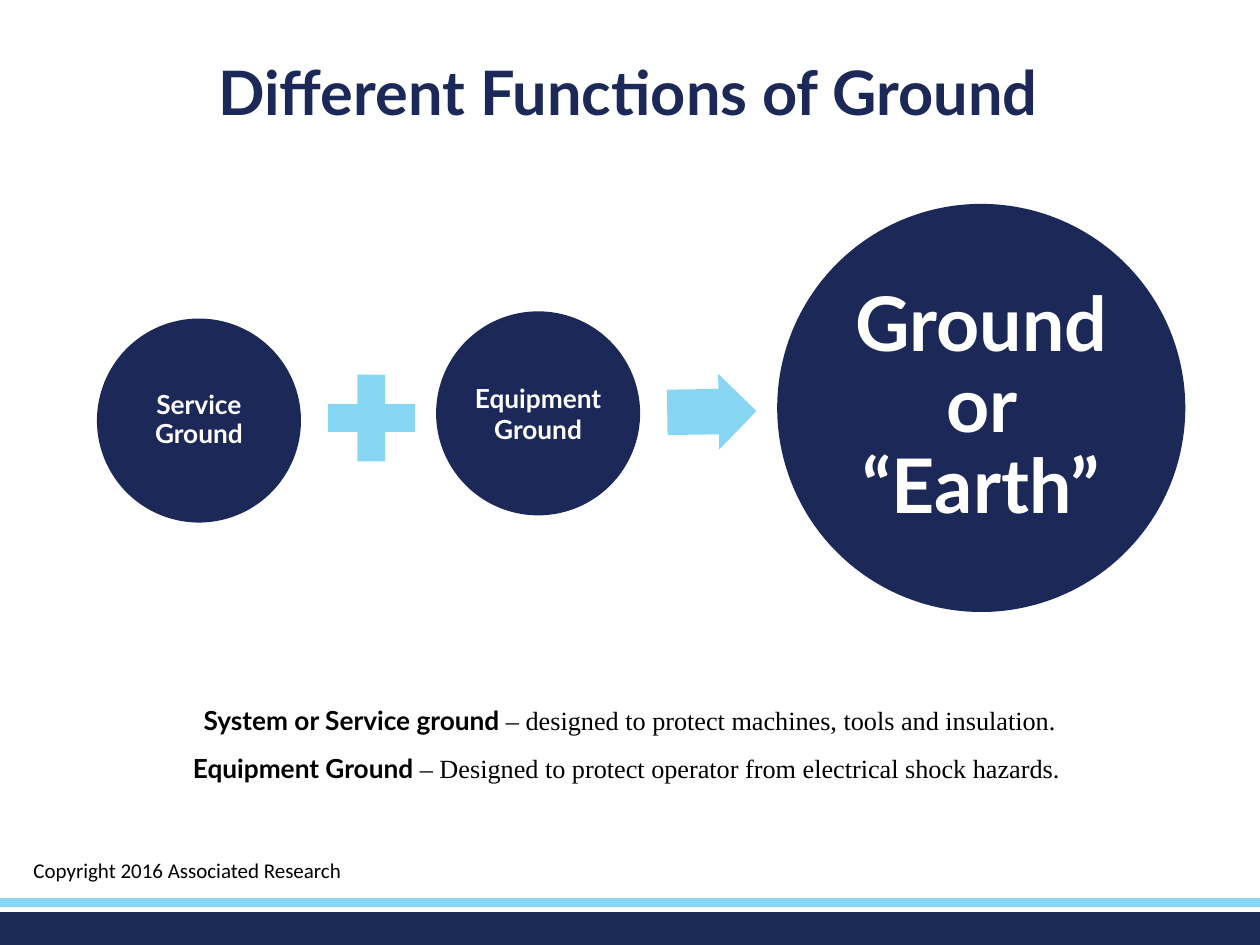
from dataclasses import dataclass

from pptx import Presentation
from pptx.dml.color import RGBColor
from pptx.enum.shapes import MSO_SHAPE
from pptx.enum.text import MSO_ANCHOR, PP_ALIGN
from pptx.util import Pt

RECT = MSO_SHAPE.RECTANGLE
OVAL = MSO_SHAPE.OVAL
PLUS = MSO_SHAPE.MATH_PLUS
ARROW = MSO_SHAPE.RIGHT_ARROW
TOP, MIDDLE = MSO_ANCHOR.TOP, MSO_ANCHOR.MIDDLE
LEFT, CENTER = PP_ALIGN.LEFT, PP_ALIGN.CENTER

NAVY, SKY, WHITE, BLACK = "1C2958", "87D6F4", "FFFFFF", "000000"
HEAD, BODY, FOOT = "Lato", "Times New Roman", "Calibri"


@dataclass
class Box:
    left: float
    top: float
    width: float
    height: float


@dataclass
class Run:
    text: str
    size: float
    color: str = BLACK
    font: str = HEAD
    bold: bool = True


@dataclass
class Disc:
    box: Box
    run: Run
    inset: float
    gap: float


def paint(color: str) -> RGBColor:
    return RGBColor.from_string(color)


def draw_shape(slide, kind, box: Box, color: str):
    shape = slide.shapes.add_shape(
        kind, Pt(box.left), Pt(box.top), Pt(box.width), Pt(box.height))
    shape.shadow.inherit = False
    shape.fill.solid()
    shape.fill.fore_color.rgb = paint(color)
    shape.line.fill.background()
    return shape


def write(frame, lines: list[list[Run]], align=CENTER, anchor=TOP,
          gap: float = 1.0) -> None:
    frame.word_wrap = True
    frame.vertical_anchor = anchor
    for index, runs in enumerate(lines):
        para = frame.add_paragraph() if index else frame.paragraphs[0]
        para.alignment = align
        para.line_spacing = gap
        for item in runs:
            run = para.add_run()
            run.text = item.text
            run.font.size = Pt(item.size)
            run.font.name = item.font
            run.font.bold = item.bold
            run.font.color.rgb = paint(item.color)


def draw_text(slide, box: Box, lines: list[list[Run]], **style) -> None:
    label = slide.shapes.add_textbox(
        Pt(box.left), Pt(box.top), Pt(box.width), Pt(box.height))
    write(label.text_frame, lines, **style)


def draw_disc(slide, disc: Disc) -> None:
    shape = draw_shape(slide, OVAL, disc.box, NAVY)
    frame = shape.text_frame
    frame.margin_left = frame.margin_right = Pt(disc.inset)
    frame.margin_top = frame.margin_bottom = Pt(disc.inset)
    write(frame, [[disc.run]], anchor=MIDDLE, gap=disc.gap)


def main() -> None:
    deck = Presentation()
    deck.slide_width, deck.slide_height = Pt(720), Pt(540)
    slide = deck.slides.add_slide(deck.slide_layouts[6])

    draw_shape(slide, RECT, Box(0, 521.3, 720, 18.7), "1C2A58")
    draw_shape(slide, RECT, Box(0, 513.2, 720, 5.2), "88D6F4")
    draw_text(slide, Box(12, 486.7, 228.5, 29),
              [[Run("Copyright 2016 Associated Research", 12, font=FOOT,
                    bold=False)]], align=LEFT)

    terms = [
        ("System or Service ground ",
         "– designed to protect machines, tools and insulation."),
        ("Equipment Ground ",
         "– Designed to protect operator from electrical shock hazards. "),
    ]
    draw_text(slide, Box(24, 390.2, 672, 62),
              [[Run(term, 15), Run(sense, 15, font=BODY, bold=False)]
               for term, sense in terms], gap=1.5)

    small, large = 116.6, 233.2
    discs = [
        Disc(Box(55.4, 182, small, small),
             Run("Service Ground", 15, WHITE), 1.5, 0.9),
        Disc(Box(249.2, 177.9, small, small),
             Run("Equipment Ground", 15, WHITE), 1.5, 1.0),
        Disc(Box(444.1, 116.5, large, large),
             Run("Ground or “Earth”", 43, WHITE), 4.3, 0.9),
    ]
    for disc in discs:
        draw_disc(slide, disc)

    draw_shape(slide, PLUS, Box(178.4, 205.1, 67.6, 67.6), SKY)
    arrow = draw_shape(slide, ARROW, Box(381.3, 213.7, 51, 43.2), SKY)
    arrow.adjustments[0] = 0.6
    arrow.adjustments[1] = 0.5
    arrow.rotation = 359.2

    draw_text(slide, Box(59, 33.8, 600, 41.8),
              [[Run("Different Functions of Ground", 35, NAVY)]],
              anchor=MIDDLE, gap=0.9)
    deck.save("out.pptx")


if __name__ == "__main__":
    main()
